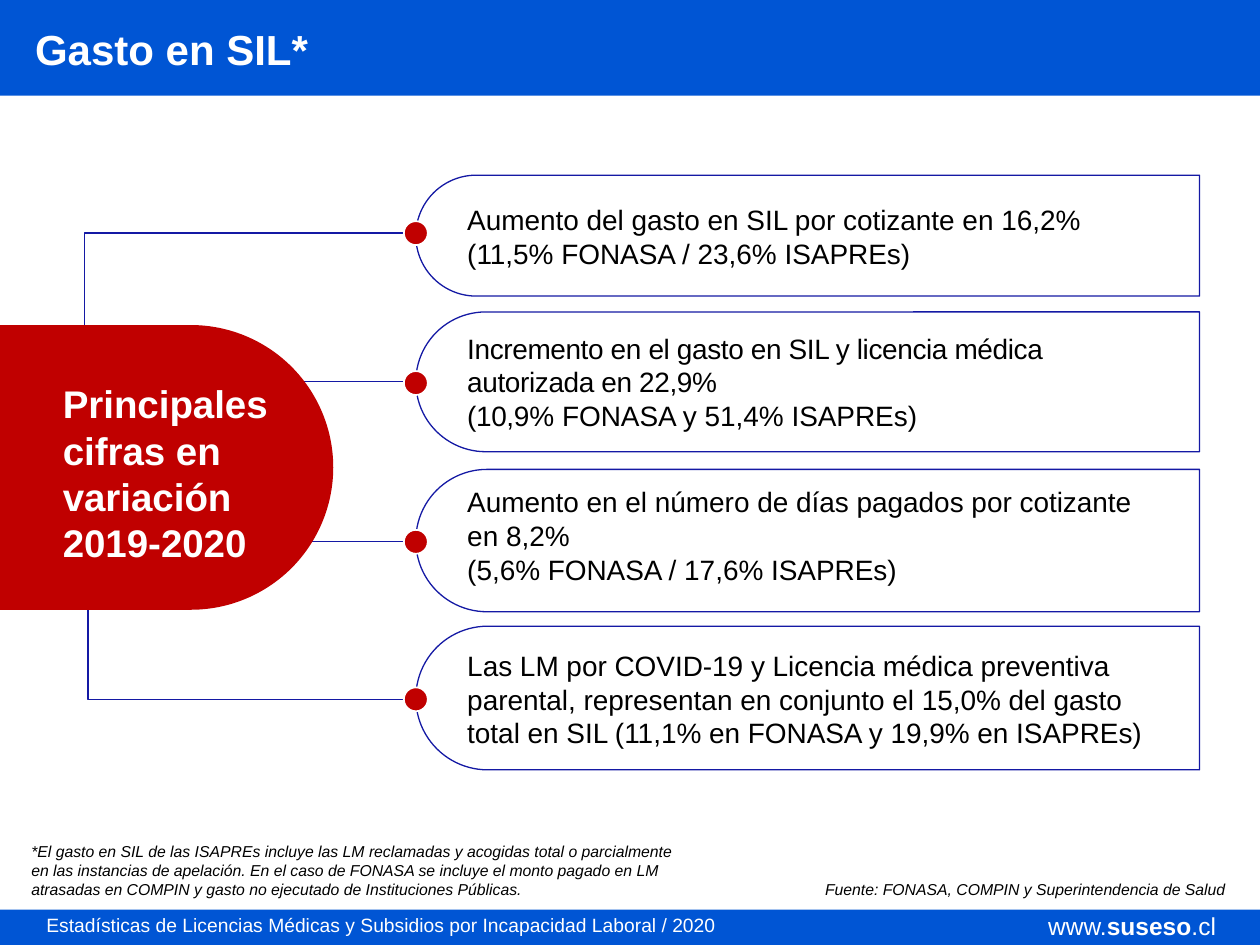
from dataclasses import dataclass

from lxml import etree
from pptx import Presentation
from pptx.dml.color import RGBColor
from pptx.enum.shapes import MSO_CONNECTOR, MSO_SHAPE
from pptx.enum.text import MSO_ANCHOR, MSO_AUTO_SIZE, PP_ALIGN
from pptx.oxml.ns import qn
from pptx.util import Inches, Pt

BLUE = RGBColor(0x00, 0x55, 0xD4)
NAVY = RGBColor(0x14, 0x19, 0xA4)
RED = RGBColor(0xC0, 0x00, 0x00)
WHITE = RGBColor(0xFF, 0xFF, 0xFF)
BLACK = RGBColor(0x00, 0x00, 0x00)

ELBOW = MSO_CONNECTOR.ELBOW
RECTANGLE = MSO_SHAPE.RECTANGLE
OVAL = MSO_SHAPE.OVAL
ROUND_TOP = MSO_SHAPE.ROUND_2_SAME_RECTANGLE
TOP = MSO_ANCHOR.TOP
LEFT, CENTER = PP_ALIGN.LEFT, PP_ALIGN.CENTER
GROW, FIXED = MSO_AUTO_SIZE.SHAPE_TO_FIT_TEXT, MSO_AUTO_SIZE.NONE

CARD_CENTER_X = 6.41
CARD_WIDTH = 6.22
CARD_TEXT_LEFT = 3.61
DOT_CENTER_X = 3.3
DOT_SIZE = 0.19


@dataclass
class Run:
    text: str
    bold: bool = False
    spacing: float = 0


@dataclass
class Card:
    center_y: float
    height: float
    dot_y: float
    text_top: float
    text_width: float
    text_height: float
    paragraphs: list[list[Run]]


@dataclass
class Link:
    start: tuple[float, float]
    end: tuple[float, float]
    bend_x: float


CARDS = [
    Card(1.87, 0.96, 1.85, 1.56, 5.91, 0.64, [
        [Run("Aumento del gasto en SIL por cotizante en 16,2%")],
        [Run("(11,5% FONASA / 23,6% ISAPREs)")]]),
    Card(3.03, 1.11, 3.04, 2.58, 5.71, 0.91, [
        [Run("Incremento en el gasto en SIL y licencia médica autorizada en 22,9%",
             spacing=-0.2)],
        [Run("(10,9", spacing=-0.2), Run("% FONASA y 51,4% ISAPREs)")]]),
    Card(4.29, 1.13, 4.3, 3.8, 5.59, 0.91, [
        [Run("Aumento en el número de días pagados por cotizante en 8,2%")],
        [Run("(5,6% FONASA / 17,6% ISAPREs)")]]),
    Card(5.54, 1.14, 5.55, 5.1, 5.71, 0.91, [
        [Run("Las LM por COVID-19 y Licencia médica preventiva parental, "
             "representan en conjunto el 15,0% del gasto total en SIL "
             "(11,1% en FONASA y 19,9% en ISAPREs)")]]),
]

LINKS = [
    Link((3.28, 5.55), (1.17, 4.35), 0.7),
    Link((3.29, 4.3), (1.01, 3.8), 2.15),
    Link((3.24, 3.03), (1.6, 4.13), 0.71),
    Link((3.2, 1.85), (1.56, 2.94), 0.67),
]


def add_link(slide, link: Link) -> None:
    """Draw an elbow line whose vertical part stands at bend_x."""
    connector = slide.shapes.add_connector(
        ELBOW, *(Inches(value) for value in link.start + link.end))
    connector.line.color.rgb = NAVY
    connector.line.width = Pt(0.75)
    properties = connector._element.spPr
    bend = (link.start[0] - link.bend_x) / (link.start[0] - link.end[0])
    guides = properties.find(qn("a:prstGeom")).get_or_add_avLst()
    etree.SubElement(guides, qn("a:gd"), name="adj1",
                     fmla=f"val {round(bend * 100000)}")
    etree.SubElement(properties, qn("a:effectLst"))


def add_box(slide, kind, left: float, top: float, width: float, height: float,
            fill: RGBColor, line: RGBColor | None = None, line_width: float = 0.75):
    shape = slide.shapes.add_shape(
        kind, Inches(left), Inches(top), Inches(width), Inches(height))
    shape.shadow.inherit = False
    shape.fill.solid()
    shape.fill.fore_color.rgb = fill
    if line is None:
        shape.line.fill.background()
    else:
        shape.line.color.rgb = line
        shape.line.width = Pt(line_width)
    return shape


def add_tab(slide, center_x: float, center_y: float, width: float, height: float,
            rotation: int, fill: RGBColor, line: RGBColor | None = None) -> None:
    """Draw a box rounded on one side; width and height are as seen after turning."""
    shape = add_box(slide, ROUND_TOP, center_x - height / 2, center_y - width / 2,
                    height, width, fill, line)
    shape.adjustments[0] = 0.5
    shape.adjustments[1] = 0
    shape.rotation = rotation


def add_text(slide, left: float, top: float, width: float, height: float,
             paragraphs: list[list[Run]], size: int, color: RGBColor,
             italic: bool = False, alignment=LEFT, auto_size=FIXED) -> None:
    box = slide.shapes.add_textbox(
        Inches(left), Inches(top), Inches(width), Inches(height))
    frame = box.text_frame
    frame.word_wrap = True
    frame.auto_size = auto_size
    frame.vertical_anchor = TOP
    for index, runs in enumerate(paragraphs):
        paragraph = frame.add_paragraph() if index else frame.paragraphs[0]
        paragraph.alignment = alignment
        for item in runs:
            run = paragraph.add_run()
            run.text = item.text
            font_format = {"name": "Arial", "size": Pt(size),
                           "bold": item.bold, "italic": italic}
            for name, value in font_format.items():
                setattr(run.font, name, value)
            run.font.color.rgb = color
            if item.spacing:
                run._r.get_or_add_rPr().set("spc", str(round(item.spacing * 100)))


def main() -> None:
    presentation = Presentation()
    presentation.slide_width = Inches(10)
    presentation.slide_height = Inches(7.5)
    slide = presentation.slides.add_slide(presentation.slide_layouts[6])

    # Lines from the central topic to the cards
    for link in LINKS:
        add_link(slide, link)

    # Central topic
    add_tab(slide, 1.32, 3.71, 2.65, 2.26, 90, RED)
    add_text(slide, 0.4, 2.97, 1.88, 2.41,
             [[Run("Principales cifras en variación 2019-2020", bold=True)]], 22, WHITE)

    # Cards with their dots
    for card in CARDS:
        add_tab(slide, CARD_CENTER_X, card.center_y, CARD_WIDTH, card.height,
                270, WHITE, NAVY)
        add_text(slide, CARD_TEXT_LEFT, card.text_top, card.text_width,
                 card.text_height, card.paragraphs, 16, BLACK, auto_size=GROW)
        add_box(slide, OVAL, DOT_CENTER_X - DOT_SIZE / 2, card.dot_y - DOT_SIZE / 2,
                DOT_SIZE, DOT_SIZE, RED, WHITE, 1)

    # Notes
    add_text(slide, 0.15, 6.63, 5.32, 0.52, [[Run(
        "*El gasto en SIL de las ISAPREs incluye las LM reclamadas y acogidas total o "
        "parcialmente en las instancias de apelación. En el caso de FONASA se incluye "
        "el monto pagado en LM atrasadas en COMPIN y gasto no ejecutado de "
        "Instituciones Públicas.")]], 9, BLACK, italic=True)
    add_text(slide, 6.45, 6.93, 3.65, 0.29,
             [[Run("Fuente: FONASA, COMPIN y Superintendencia de Salud")]],
             9, BLACK, italic=True)

    # Title bar
    add_box(slide, RECTANGLE, 0, 0, 10, 0.76, BLUE)
    add_text(slide, 0.18, 0.14, 8.45, 0.59, [[Run("Gasto en SIL*", bold=True)]],
             24, WHITE)

    # Footer bar
    add_box(slide, RECTANGLE, 0, 7.22, 10, 0.28, BLUE)
    add_text(slide, 0.27, 7.2, 7.87, 0.29, [[Run(
        "Estadísticas de Licencias Médicas y Subsidios por Incapacidad Laboral / 2020")]],
        11, WHITE, auto_size=GROW)
    add_text(slide, 8.17, 7.18, 1.63, 0.38,
             [[Run("www."), Run("suseso", bold=True), Run(".cl")]],
             14, WHITE, alignment=CENTER)

    presentation.save("out.pptx")


if __name__ == "__main__":
    main()
